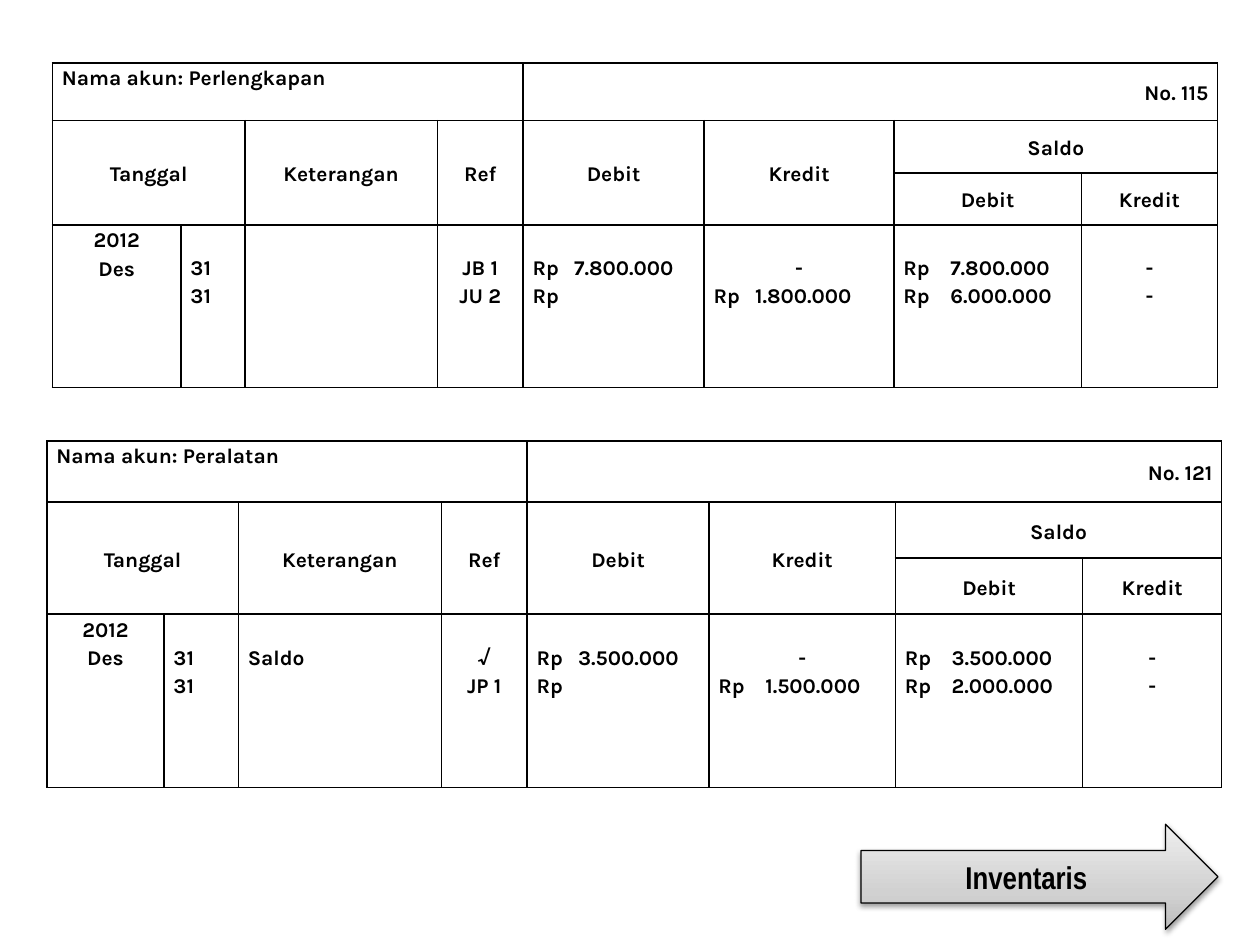
from lxml import etree
from pptx import Presentation
from pptx.dml.color import RGBColor
from pptx.enum import shapes, text
from pptx.oxml import ns, parse_xml
from pptx.util import Pt

A = ns.nsdecls("a")
AL = text.PP_ALIGN
ANC = text.MSO_ANCHOR
LINE = 16  # height of one text line

HEADS = [(0, "Tanggal"), (2, "Keterangan"), (3, "Ref"), (4, "Debit"), (5, "Kredit")]


def color(hex_code):
    return RGBColor.from_string(hex_code)


def add_line(p, txt, size=12, font="Karla", align=AL.CENTER, spacing=1.15, tab=None):
    """Fill one paragraph; an amount after a tab gets its own tab stop."""
    if tab and "\t" in txt:
        p._p.get_or_add_pPr().append(parse_xml(
            f'<a:tabLst {A}><a:tab pos="{Pt(tab)}" algn="l"/></a:tabLst>'))
    p.alignment = align
    p.line_spacing = spacing
    r = p.add_run()
    r.text = txt
    r.font.size, r.font.name, r.font.bold = Pt(size), font, True
    r.font.color.rgb = color("000000")


def fill_cell(cell, lines, anchor=ANC.MIDDLE, skip=0, **fmt):
    """Write lines into a cell, starting a number of lines below the top."""
    cell.vertical_anchor = anchor
    cell.margin_top = Pt(skip * LINE)
    tf = cell.text_frame
    for i, txt in enumerate(lines):
        p = tf.paragraphs[0] if i == 0 else tf.add_paragraph()
        style = dict(fmt, align=AL.CENTER) if txt == "-" else fmt
        add_line(p, txt, **style)


def format_cell(cell):
    """Plain cell with a thin black border on each side."""
    cell.margin_left = cell.margin_right = Pt(5.4)
    cell.margin_top = cell.margin_bottom = 0
    cell.fill.background()
    tcPr = cell._tc.get_or_add_tcPr()
    for i, side in enumerate("LRTB"):
        tcPr.insert(i, parse_xml(
            f'<a:ln{side} {A} w="{Pt(1)}"><a:solidFill><a:srgbClr val="000000"/>'
            f'</a:solidFill></a:ln{side}>'))


def add_ledger(s, left, top, widths, heights, name, number, entries, tabs):
    """Ledger account; entries hold the lines of the columns after the month."""
    t = s.shapes.add_table(len(heights), len(widths), Pt(left), Pt(top),
                           Pt(sum(widths)), Pt(sum(heights))).table
    t.first_row = t.horz_banding = False
    for col, w in zip(t.columns, widths):
        col.width = Pt(w)
    for row, h in zip(t.rows, heights):
        row.height = Pt(h)
    for cell in t.iter_cells():
        format_cell(cell)

    # Account name and number
    t.cell(0, 0).merge(t.cell(0, 3))
    t.cell(0, 4).merge(t.cell(0, 7))
    fill_cell(t.cell(0, 0), [name], ANC.TOP, align=AL.JUSTIFY)
    fill_cell(t.cell(0, 4), [number], align=AL.RIGHT)

    # Column heads
    for c, head in HEADS:
        t.cell(1, c).merge(t.cell(2, 1 if c == 0 else c))
        fill_cell(t.cell(1, c), [head])
    t.cell(1, 6).merge(t.cell(1, 7))
    fill_cell(t.cell(1, 6), ["Saldo"])
    fill_cell(t.cell(2, 6), ["Debit"])
    fill_cell(t.cell(2, 7), ["Kredit"])

    # Entries, one line below the year
    fill_cell(t.cell(3, 0), ["2012", "Des"], ANC.TOP)
    for c, lines in enumerate(entries, 1):
        if lines:
            fill_cell(t.cell(3, c), lines, ANC.TOP, skip=1, tab=tabs.get(c),
                      align=AL.CENTER if c == 3 else AL.JUSTIFY)


def add_arrow(s, left, top, width, height, label):
    """Grey arrow with a gradient and a soft shadow."""
    sp = s.shapes.add_shape(shapes.MSO_SHAPE.RIGHT_ARROW,
                            Pt(left), Pt(top), Pt(width), Pt(height))
    sp.fill.gradient()
    sp.fill.gradient_angle = 90
    stops = sp._element.spPr.find(ns.qn("a:gradFill")).find(ns.qn("a:gsLst"))
    for old in list(stops):
        stops.remove(old)
    for pos, shade in [(0, "BDBDBD"), (35, "D1D1D1"), (100, "EEEEEE")]:
        gs = etree.SubElement(stops, ns.qn("a:gs"), pos=str(pos * 1000))
        etree.SubElement(gs, ns.qn("a:srgbClr"), val=shade)
    sp.line.color.rgb = color("000000")
    sp.line.width = Pt(0.75)
    sp.shadow.inherit = False
    sp._element.spPr.find(ns.qn("a:effectLst")).append(parse_xml(
        f'<a:outerShdw {A} blurRad="{Pt(3.1)}" dist="{Pt(1.6)}" dir="5400000" '
        'rotWithShape="0"><a:srgbClr val="000000"><a:alpha val="38000"/>'
        '</a:srgbClr></a:outerShdw>'))
    tf = sp.text_frame
    tf.vertical_anchor = ANC.MIDDLE
    add_line(tf.paragraphs[0], label, size=18, font="Arial Narrow", spacing=1)


def main():
    prs = Presentation()
    prs.slide_width, prs.slide_height = Pt(720), Pt(540)
    s = prs.slides.add_slide(prs.slide_layouts[6])

    # Supplies account
    add_ledger(s, 30, 36, [73.5, 36.5, 110, 49, 103.5, 108.5, 107, 78],
               [33, 29.75, 29.75, 93], "Nama akun: Perlengkapan", "No. 115",
               [["31", "31"], [], ["JB 1", "JU 2"], ["Rp\t7.800.000", "Rp"],
                ["-", "Rp\t1.800.000"], ["Rp\t7.800.000", "Rp\t6.000.000"],
                ["-", "-"]],
               {4: 23.75, 5: 23.75, 6: 26.75})

    # Equipment account
    add_ledger(s, 26.75, 252, [67, 42.5, 116, 49, 104, 106.5, 107, 79.5],
               [35, 32, 32, 99], "Nama akun: Peralatan", "No. 121",
               [["31", "31"], ["Saldo"], ["√", "JP 1"], ["Rp\t3.500.000", "Rp"],
                ["-", "Rp\t1.500.000"], ["Rp\t3.500.000", "Rp\t2.000.000"],
                ["-", "-"]],
               {4: 23.75, 5: 26.75, 6: 26.75})

    # Link to the next account
    add_arrow(s, 492, 471, 204, 60, "Inventaris")

    prs.save("out.pptx")


if __name__ == "__main__":
    main()
